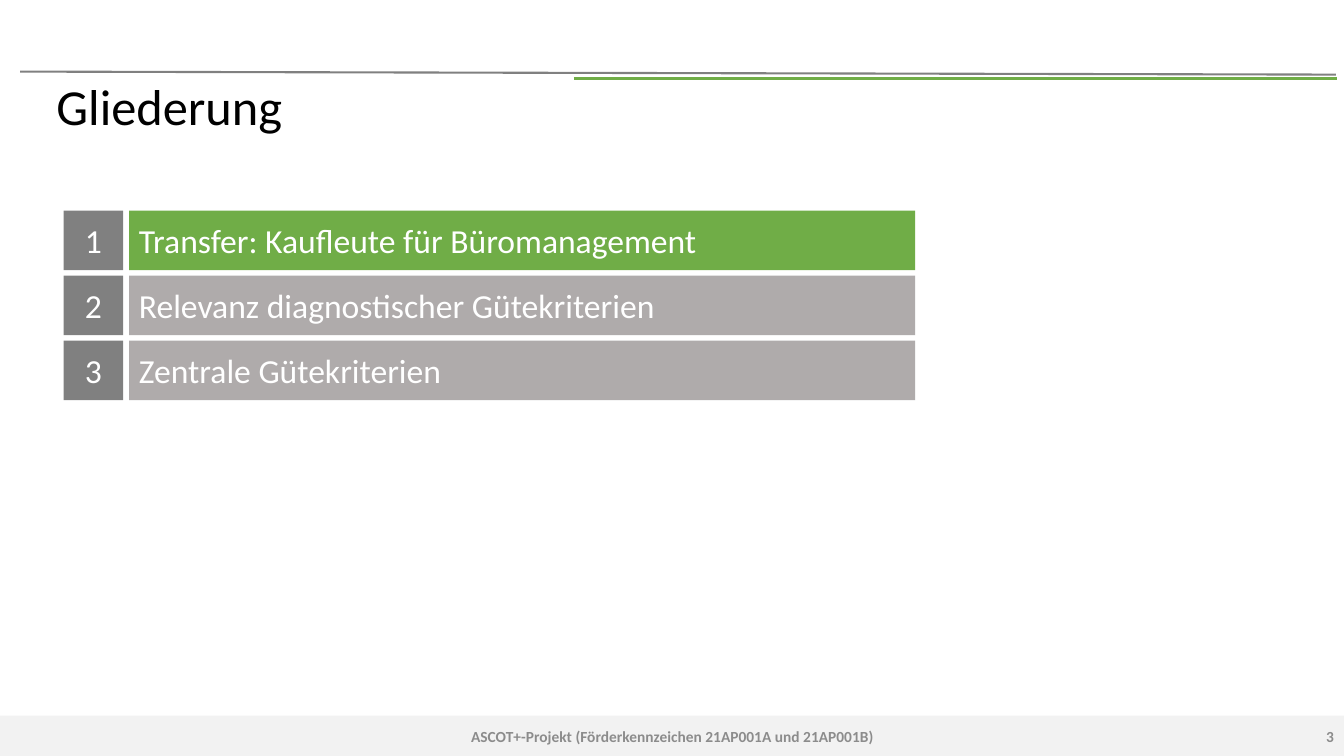
import pptx
import pptx.dml.color
import pptx.enum.shapes
import pptx.enum.text
import pptx.oxml
import pptx.oxml.ns
import pptx.util

COLORS = {
    "band": "F2F2F2",
    "rule": "808080",
    "accent": "70AD47",
    "muted": "AFABAB",
    "title": "000000",
    "footer": "8C8C8C",
    "white": "FFFFFF",
}
ALIGN = pptx.enum.text.PP_ALIGN
FORMATS = {
    "title": {"size": pptx.util.Pt(36), "bold": False},
    "agenda": {"size": pptx.util.Pt(24), "bold": False},
    "footer": {"size": pptx.util.Pt(11), "bold": True},
}
CHAPTERS = [
    "Transfer: Kaufleute für Büromanagement",
    "Relevanz diagnostischer Gütekriterien",
    "Zentrale Gütekriterien",
]
CURRENT_CHAPTER = 1
FOOTER_TOP, FOOTER_HEIGHT = 94.67, 5.33
AGENDA_TOP, AGENDA_STEP, AGENDA_HEIGHT = 27.87, 8.6, 7.87


class AgendaSlide:
    """Places elements on a grid of 100 columns and 100 rows."""

    def __init__(self, deck):
        self.column = deck.slide_width / 100
        self.row = deck.slide_height / 100
        self.font_name = "Calibri"
        self.page = deck.slides.add_slide(deck.slide_layouts.get_by_name("Title Only"))

    def color(self, name):
        return pptx.dml.color.RGBColor.from_string(COLORS[name])

    def area(self, left, top, width, height):
        return (
            round(left * self.column),
            round(top * self.row),
            round(width * self.column),
            round(height * self.row),
        )

    def fill_text(self, box, text, style, color, align=ALIGN.LEFT, spacing=1.0):
        frame = box.text_frame
        frame.word_wrap = True
        frame.auto_size = pptx.enum.text.MSO_AUTO_SIZE.NONE
        frame.vertical_anchor = pptx.enum.text.MSO_ANCHOR.MIDDLE
        para = frame.paragraphs[0]
        para.alignment = align
        para.line_spacing = spacing
        span = para.add_run()
        span.text = text
        for name, value in {"name": self.font_name, **FORMATS[style]}.items():
            setattr(span.font, name, value)
        span.font.color.rgb = self.color(color)

    def title(self, text, *place):
        box = self.page.shapes.title
        box.left, box.top, box.width, box.height = self.area(*place)
        self.fill_text(box, text, "title", "title", spacing=0.9)

    def label(self, text, place, align):
        box = self.page.shapes.add_textbox(*self.area(*place))
        self.fill_text(box, text, "footer", "footer", align)

    def block(self, fill, *place):
        box = self.page.shapes.add_shape(
            pptx.enum.shapes.MSO_SHAPE.RECTANGLE, *self.area(*place)
        )
        box.shadow.inherit = False
        box.fill.solid()
        box.fill.fore_color.rgb = self.color(fill)
        box.line.fill.background()
        return box

    def rule(self, color, weight, start, end):
        line = self.page.shapes.add_connector(
            pptx.enum.shapes.MSO_CONNECTOR.STRAIGHT,
            *self.area(*start, *end),
        )
        line.line.color.rgb = self.color(color)
        line.line.width = pptx.util.Pt(weight)
        properties = line._element.find(pptx.oxml.ns.qn("p:spPr"))
        properties.append(pptx.oxml.parse_xml(
            f"<a:effectLst {pptx.oxml.ns.nsdecls('a')}/>"
        ))

    def agenda_item(self, number, text):
        top = AGENDA_TOP + (number - 1) * AGENDA_STEP
        badge = self.block("rule", 4.73, top, 4.43, AGENDA_HEIGHT)
        self.fill_text(badge, str(number), "agenda", "white", ALIGN.CENTER)
        fill = "accent" if number == CURRENT_CHAPTER else "muted"
        bar = self.block(fill, 9.6, top, 58.5, AGENDA_HEIGHT)
        self.fill_text(bar, text, "agenda", "white")


def main():
    deck = pptx.Presentation()
    deck.slide_width = pptx.util.Inches(13.33)
    deck.slide_height = pptx.util.Inches(7.5)
    slide = AgendaSlide(deck)
    slide.block("band", 0, FOOTER_TOP, 100, FOOTER_HEIGHT)
    slide.rule("rule", 1.5, (1.5, 9.47), (99.4, 9.87))
    slide.rule("accent", 2.25, (42.69, 10.4), (99.48, 10.4))
    slide.title("Gliederung", 3.45, 10.53, 91.52, 7.87)
    slide.label(
        "ASCOT+-Projekt (Förderkennzeichen 21AP001A und 21AP001B)",
        (33.16, FOOTER_TOP, 33.76, FOOTER_HEIGHT),
        ALIGN.CENTER,
    )
    slide.label("3", (77.5, FOOTER_TOP, 22.5, FOOTER_HEIGHT), ALIGN.RIGHT)
    for number, chapter in enumerate(CHAPTERS, 1):
        slide.agenda_item(number, chapter)
    deck.save("out.pptx")


if __name__ == "__main__":
    main()
